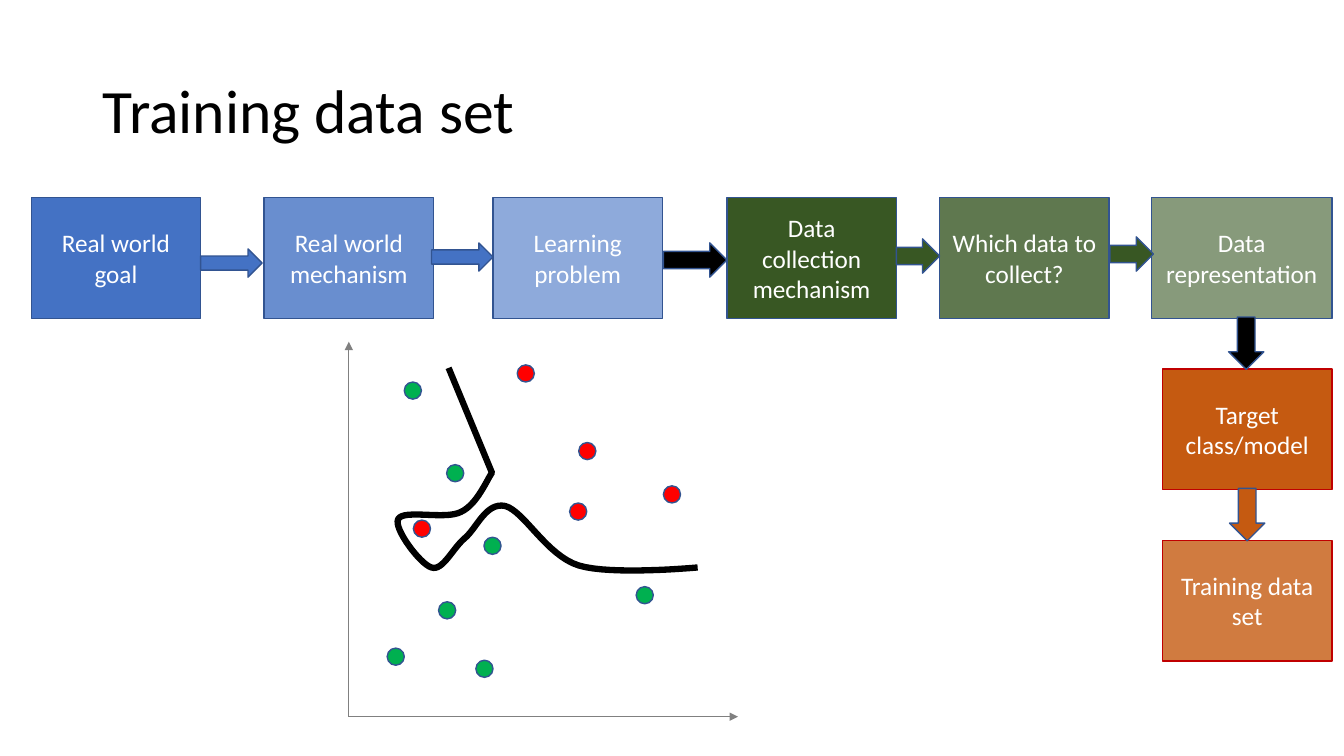
from lxml import etree
from pptx import Presentation
from pptx.dml.color import RGBColor
from pptx.enum.shapes import MSO_CONNECTOR, MSO_SHAPE
from pptx.enum.text import MSO_ANCHOR, MSO_AUTO_SIZE, PP_ALIGN
from pptx.oxml.ns import qn
from pptx.util import Pt

PX = 9144  # 100 px to the inch
FONT = "Calibri"
RECT, ARROW, OVAL = MSO_SHAPE.RECTANGLE, MSO_SHAPE.RIGHT_ARROW, MSO_SHAPE.OVAL
STRAIGHT = MSO_CONNECTOR.STRAIGHT
MIDDLE, NO_FIT = MSO_ANCHOR.MIDDLE, MSO_AUTO_SIZE.NONE
LEFT, CENTER = PP_ALIGN.LEFT, PP_ALIGN.CENTER

BLACK = RGBColor(0x00, 0x00, 0x00)
WHITE = RGBColor(0xFF, 0xFF, 0xFF)
GRAY = RGBColor(0x80, 0x80, 0x80)
BLUE = RGBColor(0x44, 0x72, 0xC4)
NAVY = RGBColor(0x32, 0x54, 0x91)
FOREST = RGBColor(0x38, 0x57, 0x23)
ORANGE = RGBColor(0xC5, 0x5A, 0x11)
CRIMSON = RGBColor(0xC0, 0x00, 0x00)
GREEN = RGBColor(0x00, 0xB0, 0x50)
RED = RGBColor(0xFF, 0x00, 0x00)

BOX_W, BOX_H, ROW_Y, COL_X, DOT = 168, 120, 196, 1153, 17

# text, left, top, width, fill, opacity in percent, line
STEPS = [
    ("Real world goal", 31, ROW_Y, BOX_W, BLUE, 100, NAVY),
    ("Real world mechanism", 262, ROW_Y, BOX_W, BLUE, 80, NAVY),
    ("Learning problem", 489, ROW_Y, BOX_W, BLUE, 60, NAVY),
    ("Data collection mechanism", 721, ROW_Y, BOX_W, FOREST, 100, NAVY),
    ("Which data to collect?", 932, ROW_Y, BOX_W, FOREST, 80, NAVY),
    ("Data representation", 1142, ROW_Y, 179, FOREST, 60, NAVY),
    ("Target class/model", COL_X, 366, BOX_W, ORANGE, 100, CRIMSON),
    ("Training data set", COL_X, 536, BOX_W, ORANGE, 80, CRIMSON),
]

# left, top, width, height, fill, turn
ARROWS = [
    (199, 247, 61, 28, BLUE, 0),
    (428, 241, 61, 28, BLUE, 0),
    (658, 241, 63, 34, BLACK, 0),
    (889, 237, 43, 34, FOREST, 0),
    (1101, 235, 43, 34, FOREST, 0),
    (1210, 323, 52, 35, BLACK, 90),
    (1211, 493, 52, 35, ORANGE, 90),
]

DOTS = {
    GREEN: [(401, 379), (435, 597), (384, 643), (631, 582),
            (443, 461), (480, 533), (472, 655)],
    RED: [(574, 439), (410, 516), (565, 499), (513, 362), (658, 482)],
}

# Class border: a straight start, then cubic curves (two controls and an end)
START, BEND = (445, 365), (488, 469)
CURVES = [
    ((483, 476), (473, 501), (457, 508)),
    ((442, 516), (400, 505), (395, 515)),
    ((390, 524), (417, 560), (428, 563)),
    ((439, 567), (449, 544), (461, 534)),
    ((473, 524), (482, 498), (501, 502)),
    ((520, 507), (542, 551), (574, 561)),
    ((606, 571), (692, 563), (692, 563)),
]
CUTS = 16


def write(frame, text, size, color, align):
    frame.word_wrap = True
    frame.auto_size = NO_FIT
    frame.vertical_anchor = MIDDLE
    para = frame.paragraphs[0]
    para.alignment = align
    run = para.add_run()
    run.text = text
    run.font.name = FONT
    run.font.size = Pt(size)
    run.font.color.rgb = color
    return para


def add_form(slide, kind, x, y, w, h, fill, line=NAVY):
    form = slide.shapes.add_shape(kind, x * PX, y * PX, w * PX, h * PX)
    form.shadow.inherit = False
    form.fill.solid()
    form.fill.fore_color.rgb = fill
    form.line.color.rgb = line
    form.line.width = Pt(1)
    return form


def add_step(slide, text, x, y, w, fill, alpha, line):
    box = add_form(slide, RECT, x, y, w, BOX_H, fill, line)
    if alpha < 100:
        color = box.fill._xPr.find(qn("a:solidFill"))[0]
        etree.SubElement(color, qn("a:alpha")).set("val", str(alpha * 1000))
    write(box.text_frame, text, 18, WHITE, CENTER)


def add_axis(slide, x1, y1, x2, y2):
    axis = slide.shapes.add_connector(
        STRAIGHT, x1 * PX, y1 * PX, x2 * PX, y2 * PX)
    axis.line.color.rgb = GRAY
    axis.line.width = Pt(0.5)
    props = axis._element.spPr
    tip = etree.SubElement(props.find(qn("a:ln")), qn("a:tailEnd"))
    tip.set("type", "triangle")
    etree.SubElement(props, qn("a:effectLst"))


def bezier(a, b, c, d, t):
    s = 1 - t
    return tuple(
        round(PX * (s**3 * i + 3 * s * s * t * j + 3 * s * t * t * k + t**3 * m))
        for i, j, k, m in zip(a, b, c, d))


def add_border(slide):
    points = [(BEND[0] * PX, BEND[1] * PX)]
    last = BEND
    for b, c, end in CURVES:
        points += [bezier(last, b, c, end, n / CUTS) for n in range(1, CUTS + 1)]
        last = end
    pen = slide.shapes.build_freeform(START[0] * PX, START[1] * PX)
    pen.add_line_segments(points, close=False)
    border = pen.convert_to_shape()
    border.shadow.inherit = False
    border.fill.background()
    border.line.color.rgb = BLACK
    border.line.width = Pt(4.5)


def add_title(slide, text):
    title = slide.shapes.title
    title.left, title.top = 92 * PX, 40 * PX
    title.width, title.height = 1150 * PX, 145 * PX
    write(title.text_frame, text, 44, BLACK, LEFT).line_spacing = 0.9


def main():
    deck = Presentation()
    deck.slide_width, deck.slide_height = 1333 * PX, 750 * PX
    slide = deck.slides.add_slide(deck.slide_layouts[5])

    # Process flow
    for step in STEPS:
        add_step(slide, *step)
    for x, y, w, h, fill, turn in ARROWS:
        add_form(slide, ARROW, x, y, w, h, fill).rotation = turn
    add_title(slide, "Training data set")

    # Scatter sketch
    add_axis(slide, 346, 711, 346, 339)
    add_axis(slide, 346, 711, 732, 711)
    for fill, spots in DOTS.items():
        for x, y in spots:
            add_form(slide, OVAL, x, y, DOT, DOT, fill)
    add_border(slide)

    deck.save("out.pptx")


if __name__ == "__main__":
    main()
